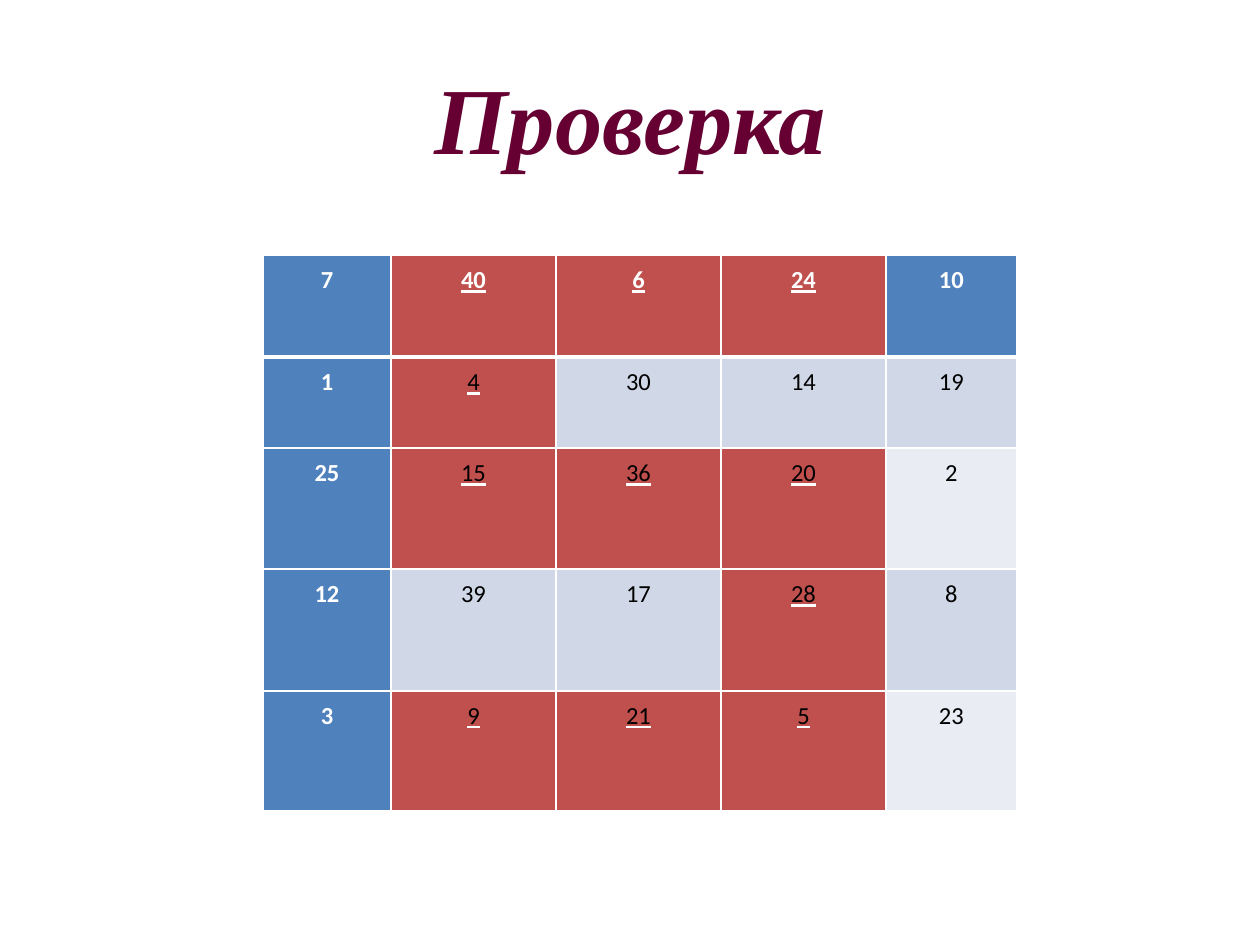
from lxml import etree
from pptx import Presentation
from pptx.dml.color import RGBColor
from pptx.enum.text import MSO_ANCHOR, PP_ALIGN
from pptx.oxml.ns import qn
from pptx.util import Emu, Pt

CENTER = PP_ALIGN.CENTER
MIDDLE = MSO_ANCHOR.MIDDLE
PX_PER_INCH = 126

WHITE, BLACK, PLUM = "FFFFFF", "000000", "660033"
BLUE, RED = "4F81BD", "C0504D"
BANDS = ["E9ECF3", "D0D8E7"]

NUMBERS = [
    [7, 40, 6, 24, 10],
    [1, 4, 30, 14, 19],
    [25, 15, 36, 20, 2],
    [12, 39, 17, 28, 8],
    [3, 9, 21, 5, 23],
]
MARKED = {40, 6, 24, 4, 15, 36, 20, 28, 9, 21, 5}
COLUMN_WIDTHS = [128, 165, 165, 165, 131]
ROW_HEIGHTS = [102, 91, 121, 122, 120]


def px(length):
    return Emu(round(length * 914400 / PX_PER_INCH))


def rgb(color):
    return RGBColor.from_string(color)


def add_solid_fill(parent, color):
    fill = etree.SubElement(parent, qn("a:solidFill"))
    etree.SubElement(fill, qn("a:srgbClr"), val=color)


def write(frame, text, *, font, size, color, bold=False, italic=False,
          underline_color=None, line_spacing=None):
    paragraph = frame.paragraphs[0]
    paragraph.alignment = CENTER
    if line_spacing:
        paragraph.line_spacing = line_spacing
    run = paragraph.add_run()
    run.text = text
    run.font.size = Pt(size)
    run.font.bold = bold
    run.font.italic = italic
    run.font.color.rgb = rgb(color)
    if underline_color:
        run.font.underline = True
        properties = run._r.get_or_add_rPr()
        add_solid_fill(etree.SubElement(properties, qn("a:uFill")), underline_color)
    run.font.name = font


def set_borders(cell, color, **widths):
    """Draw the sides L, R, T and B, in this order, with widths in points."""
    properties = cell._tc.get_or_add_tcPr()
    for side, width in widths.items():
        line = etree.SubElement(properties, qn(f"a:ln{side}"), w=str(Pt(width)))
        add_solid_fill(line, color)


def place_title(slide, left, top, width, height):
    title = slide.shapes.title
    title.left, title.top = px(left), px(top)
    title.width, title.height = px(width), px(height)
    title.text_frame.vertical_anchor = MIDDLE
    write(title.text_frame, "Проверка", font="Times New Roman", size=54,
          color=PLUM, bold=True, italic=True)


def format_number(cell, number, row, column):
    is_heading = row == 0 or column == 0
    is_marked = number in MARKED
    cell.margin_left = cell.margin_right = px(9)
    cell.margin_top = cell.margin_bottom = px(6)
    set_borders(cell, WHITE, L=0.96, R=0.96,
                T=3 if row == 1 else 0.96, B=3 if row == 0 else 0.96)
    cell.fill.solid()
    color = RED if is_marked else BLUE if is_heading else BANDS[row % 2]
    cell.fill.fore_color.rgb = rgb(color)
    if row == 0 and column == len(COLUMN_WIDTHS) - 1:
        cell.fill.fore_color.rgb = rgb(BLUE)
    write(cell.text_frame, str(number), font="Calibri", size=14,
          color=WHITE if is_heading else BLACK, bold=is_heading,
          underline_color=WHITE if is_marked else None, line_spacing=1.15)


def place_number_table(slide, left, top):
    table = slide.shapes.add_table(
        len(ROW_HEIGHTS), len(COLUMN_WIDTHS), px(left), px(top),
        px(sum(COLUMN_WIDTHS)), px(sum(ROW_HEIGHTS))).table
    for column, width in zip(table.columns, COLUMN_WIDTHS):
        column.width = px(width)
    for row, height in zip(table.rows, ROW_HEIGHTS):
        row.height = px(height)
    for row, numbers in enumerate(NUMBERS):
        for column, number in enumerate(numbers):
            format_number(table.cell(row, column), number, row, column)


def main():
    presentation = Presentation()
    presentation.slide_width, presentation.slide_height = px(1260), px(945)
    slide = presentation.slides.add_slide(presentation.slide_layouts[5])
    place_number_table(slide, 263, 255)
    place_title(slide, 63, 38, 1134, 157)
    presentation.save("out.pptx")


if __name__ == "__main__":
    main()
